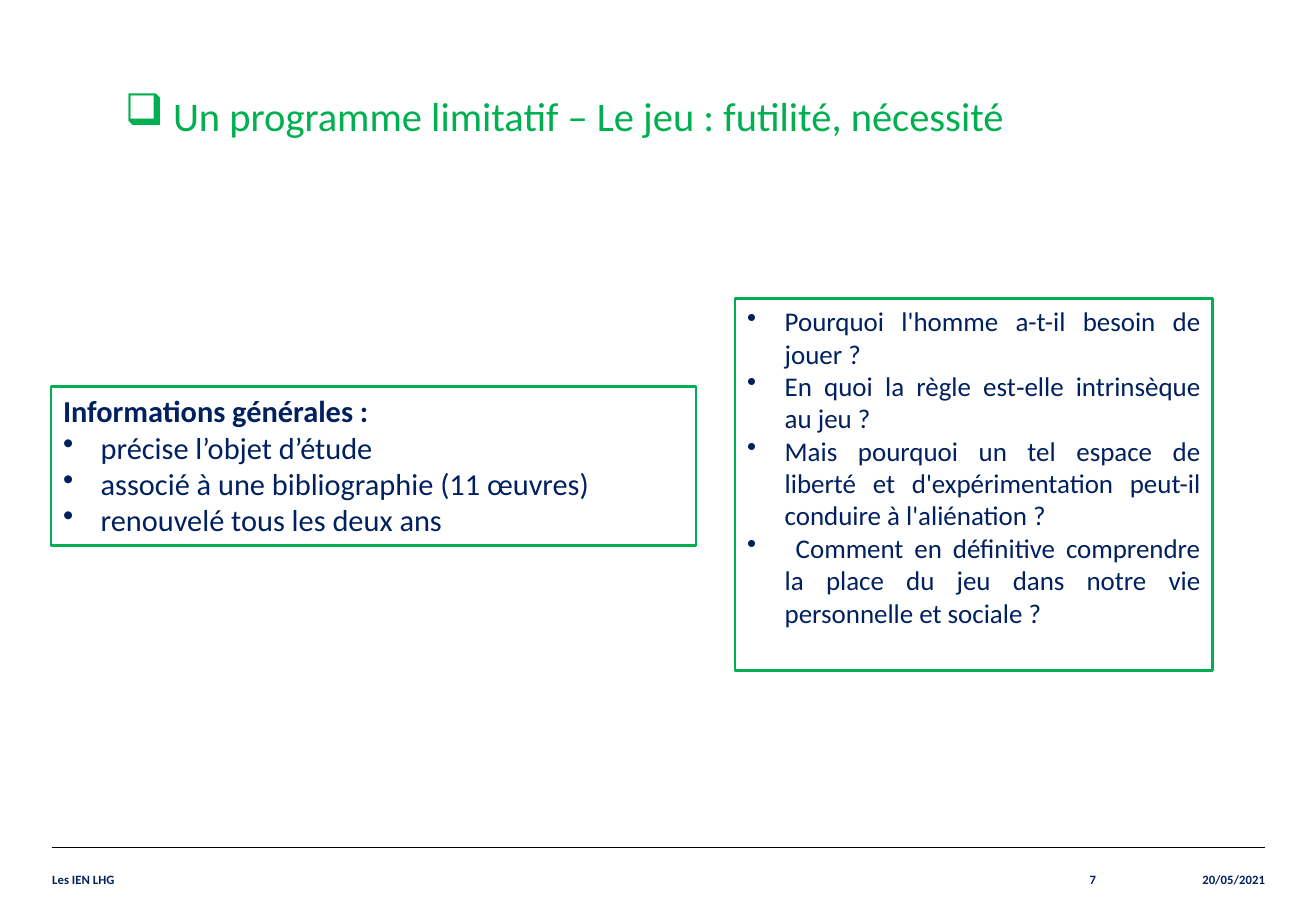
from lxml.etree import SubElement
from pptx import Presentation
from pptx.dml.color import RGBColor
from pptx.enum.shapes import MSO_CONNECTOR, MSO_SHAPE
from pptx.enum.text import MSO_ANCHOR, PP_ALIGN
from pptx.oxml.ns import qn
from pptx.util import Pt

PX = 9144
INDENT = 31
FONT = "Calibri"
NAVY, GREEN, BLACK = "002060", "00B050", "000000"
HEADING = "Informations générales :"
FACTS = [
    "précise l’objet d’étude",
    "associé à une bibliographie (11 œuvres)",
    "renouvelé tous les deux ans",
]
QUESTIONS = [
    "Pourquoi l'homme a-t-il besoin de jouer ?",
    "En quoi la règle est‑elle intrinsèque au jeu ?",
    "Mais pourquoi un tel espace de liberté et d'expérimentation peut-il conduire à l'aliénation ?",
    " Comment en définitive comprendre la place du jeu dans notre vie personnelle et sociale ?",
]
FOOTERS = [
    ("20/05/2021", 902, 139, PP_ALIGN.RIGHT),
    ("Les IEN LHG", 43, 699, PP_ALIGN.LEFT),
    ("7", 742, 160, PP_ALIGN.RIGHT),
]


def color(value):
    """Return the colour for a hex string."""
    return RGBColor.from_string(value)


def scaled(*lengths):
    """Turn px lengths into EMU."""
    return [length * PX for length in lengths]


def add_bullet(para, char, percent=100):
    """Give a paragraph a hanging bullet."""
    properties = para._p.get_or_add_pPr()
    properties.set("marL", str(INDENT * PX))
    properties.set("indent", str(-INDENT * PX))
    SubElement(properties, qn("a:buSzPct")).set("val", str(percent * 1000))
    SubElement(properties, qn("a:buChar")).set("char", char)


def style(para, size, value, bold=False, align=PP_ALIGN.LEFT):
    """Set the font and alignment of a paragraph."""
    para.alignment = align
    para.font.name = FONT
    para.font.size = Pt(size)
    para.font.bold = bold
    para.font.color.rgb = color(value)


def add_title(page, text):
    """Add the title with its square bullet."""
    frame = page.shapes.add_textbox(*scaled(93, 70, 920, 54)).text_frame
    frame.word_wrap = True
    para = frame.paragraphs[0]
    para.text = text
    add_bullet(para, "❑", 108)
    style(para, 24, GREEN)


def add_panel(page, bounds, size, items, align, heading=None):
    """Add a green-framed panel of bullets under an optional heading."""
    panel = page.shapes.add_shape(MSO_SHAPE.RECTANGLE, *scaled(*bounds))
    panel.shadow.inherit = False
    panel.fill.background()
    panel.line.color.rgb = color(GREEN)
    panel.line.width = Pt(1.5)
    frame = panel.text_frame
    frame.word_wrap = True
    frame.vertical_anchor = MSO_ANCHOR.TOP
    lines = [heading, *items] if heading else items
    frame.text = "\n".join(lines)
    for para, line in zip(frame.paragraphs, lines):
        if line != heading:
            add_bullet(para, "•")
        style(para, size, NAVY, line == heading, align)


def add_footer(page, text, left, width, align):
    """Add one footer entry."""
    frame = page.shapes.add_textbox(*scaled(left, 698, width, 52)).text_frame
    frame.word_wrap = True
    frame.vertical_anchor = MSO_ANCHOR.MIDDLE
    frame.margin_left = frame.margin_right = 0
    frame.margin_top = frame.margin_bottom = 0
    para = frame.paragraphs[0]
    para.text = text
    style(para, 7.5, NAVY, True, align)


def add_rule(page):
    """Add the line above the footer."""
    rule = page.shapes.add_connector(MSO_CONNECTOR.STRAIGHT, *scaled(43, 698, 1041, 698))
    rule.line.color.rgb = color(BLACK)
    rule.line.width = Pt(0.8)
    SubElement(rule._element.spPr, qn("a:effectLst"))


def main():
    """Build and save the slide."""
    deck = Presentation()
    deck.slide_width, deck.slide_height = scaled(1083, 750)
    page = deck.slides.add_slide(deck.slide_layouts[6])
    add_rule(page)
    for footer in FOOTERS:
        add_footer(page, *footer)
    add_title(page, " Un programme limitatif – Le jeu : futilité, nécessité")
    add_panel(page, (42, 318, 531, 131), 18, FACTS, PP_ALIGN.LEFT, HEADING)
    add_panel(page, (605, 246, 393, 306), 16, QUESTIONS, PP_ALIGN.JUSTIFY)
    deck.save("out.pptx")


if __name__ == "__main__":
    main()
